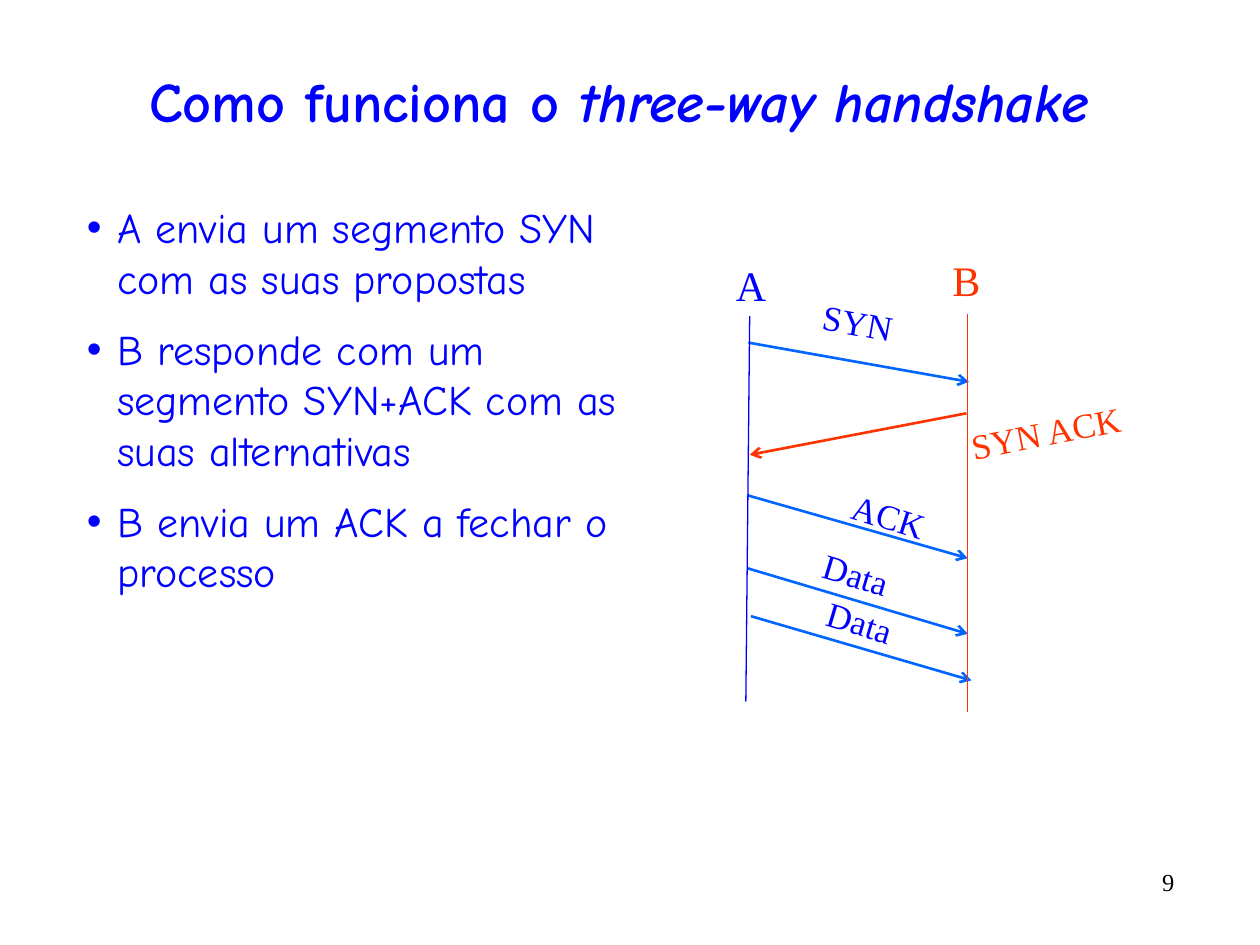
from dataclasses import dataclass

from lxml import etree
from pptx import Presentation
from pptx.dml.color import RGBColor
from pptx.enum import shapes, text
from pptx.oxml import ns
from pptx.util import Pt

BLUE = "0000FF"
ARROW_BLUE = "0066FF"
RED = "FF3300"
BLACK = "000000"
HEADING_FONT = "Comic Neue"
LABEL_FONT = "Times New Roman"


@dataclass
class Line:
    start: tuple[float, float]
    end: tuple[float, float]
    color: str
    width: float = 1.5
    arrow: bool = True


@dataclass
class Label:
    words: str
    center: tuple[float, float]
    size: tuple[float, float]
    color: str = BLUE
    font_size: float = 20
    rotation: float = 0
    align: text.PP_ALIGN = text.PP_ALIGN.CENTER
    anchor: text.MSO_ANCHOR = text.MSO_ANCHOR.MIDDLE


LINES = [
    Line((427.7, 195.8), (553.7, 218.2), ARROW_BLUE),
    Line((552.2, 236.2), (428.4, 259.9), RED),
    Line((427, 283), (553, 319), ARROW_BLUE),
    Line((427, 324.7), (553, 362.2), ARROW_BLUE),
    Line((429.1, 352.1), (555.1, 388.8), ARROW_BLUE),
    Line((553, 179.3), (553, 406.8), RED, 0.75, False),
    Line((428.4, 180.7), (426.2, 401), BLUE, 0.75, False),
]

LABELS = [
    Label("A", (429.1, 162.7), (31.7, 36), font_size=24),
    Label("B", (552.2, 159.8), (30.2, 36), RED, 24),
    Label("SYN", (490.3, 184), (54.7, 31), rotation=10.1),
    Label("SYN ACK", (597.5, 247), (103, 31), RED, rotation=-10.9),
    Label("ACK", (508, 294.8), (56.9, 31), rotation=17.4),
    Label("Data", (489.2, 328), (52.6, 31), rotation=16.7),
    Label("Data", (491.4, 355.3), (52.6, 31), rotation=16.7),
    Label("9", (642.2, 506.9), (72, 30.2), BLACK, 14,
          align=text.PP_ALIGN.RIGHT, anchor=text.MSO_ANCHOR.TOP),
]

BULLETS = [
    "A envia um segmento SYN com as suas propostas",
    "B responde com um segmento SYN+ACK com as suas alternativas",
    "B envia um ACK a fechar o processo",
]


def rgb(color: str) -> RGBColor:
    return RGBColor.from_string(color)


def format_font(font, name: str, size: float, color: str) -> None:
    font.name = name
    font.size = Pt(size)
    font.color.rgb = rgb(color)


def place(shape, left: float, top: float, width: float, height: float) -> None:
    shape.left, shape.top = Pt(left), Pt(top)
    shape.width, shape.height = Pt(width), Pt(height)


def fill_title(shape) -> None:
    place(shape, 23.8, 30.2, 660.2, 54)
    frame = shape.text_frame
    frame.auto_size = text.MSO_AUTO_SIZE.NONE
    frame.vertical_anchor = text.MSO_ANCHOR.MIDDLE
    paragraph = frame.paragraphs[0]
    paragraph.alignment = text.PP_ALIGN.CENTER
    for words, italic in (("Como funciona o ", False), ("three-way handshake", True)):
        run = paragraph.add_run()
        run.text = words
        format_font(run.font, HEADING_FONT, 32, BLUE)
        run.font.bold = True
        run.font.italic = italic


def fill_body(shape) -> None:
    place(shape, 42.5, 111.6, 319, 361.4)
    frame = shape.text_frame
    frame.text = "\n".join(BULLETS)
    frame.auto_size = text.MSO_AUTO_SIZE.NONE
    for paragraph in frame.paragraphs:
        paragraph.space_before = Pt(12)
        properties = paragraph._p.get_or_add_pPr()
        properties.set("marL", str(Pt(17.3)))
        properties.set("indent", str(Pt(-17.3)))
        etree.SubElement(properties, ns.qn("a:buChar"), char="•")
        format_font(paragraph.runs[0].font, HEADING_FONT, 24, BLUE)


def draw_line(slide, line: Line) -> None:
    connector = slide.shapes.add_connector(
        shapes.MSO_CONNECTOR.STRAIGHT,
        *(Pt(value) for value in line.start + line.end))
    connector.line.color.rgb = rgb(line.color)
    connector.line.width = Pt(line.width)
    if line.arrow:
        etree.SubElement(connector.line._get_or_add_ln(), ns.qn("a:tailEnd"), type="arrow")
    etree.SubElement(connector._element.spPr, ns.qn("a:effectLst"))


def draw_label(slide, label: Label) -> None:
    (x, y), (width, height) = label.center, label.size
    shape = slide.shapes.add_textbox(
        Pt(x - width / 2), Pt(y - height / 2), Pt(width), Pt(height))
    shape.rotation = label.rotation
    frame = shape.text_frame
    frame.text = label.words
    frame.word_wrap = False
    frame.vertical_anchor = label.anchor
    paragraph = frame.paragraphs[0]
    paragraph.alignment = label.align
    format_font(paragraph.runs[0].font, LABEL_FONT, label.font_size, label.color)


def main() -> None:
    presentation = Presentation()
    presentation.slide_width, presentation.slide_height = Pt(720), Pt(540)
    slide = presentation.slides.add_slide(presentation.slide_layouts[1])
    fill_title(slide.shapes.title)
    fill_body(slide.placeholders[1])
    for line in LINES:
        draw_line(slide, line)
    for label in LABELS:
        draw_label(slide, label)
    presentation.save("out.pptx")


if __name__ == "__main__":
    main()
